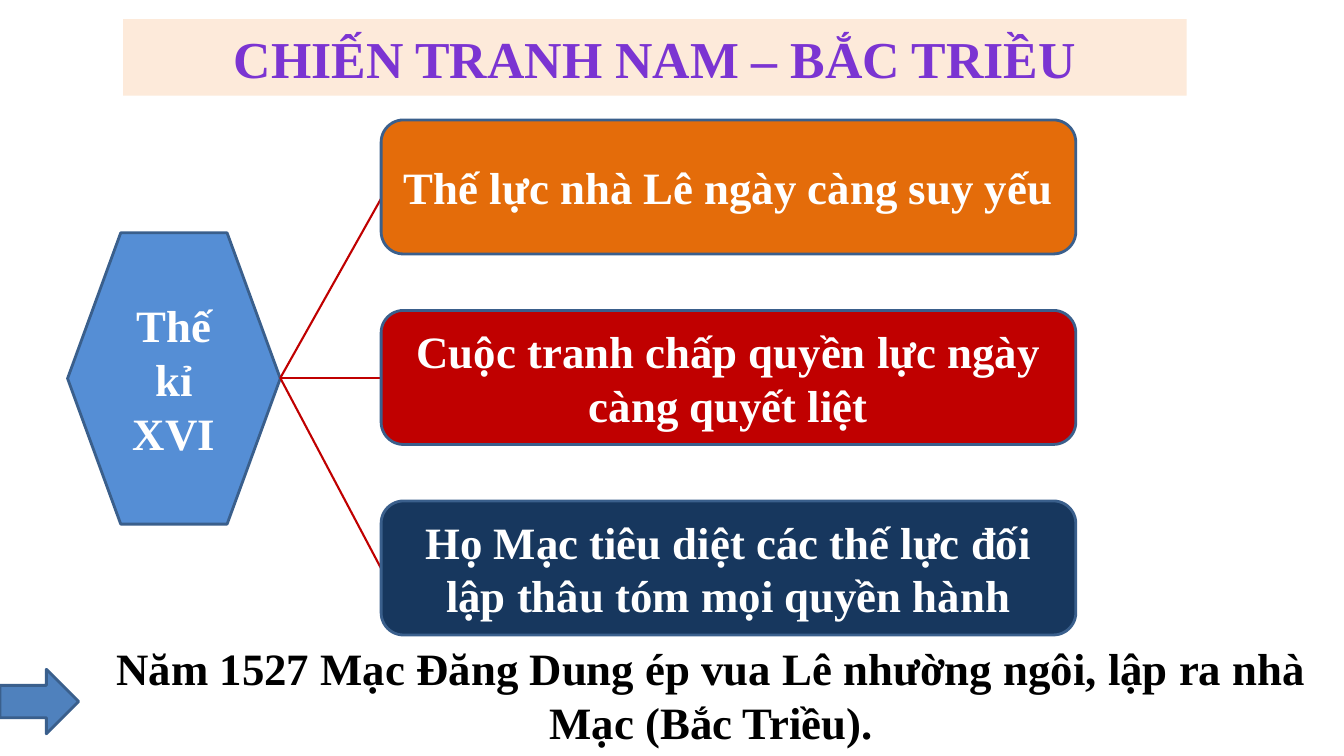
import pptx
import pptx.util
import pptx.dml.color
import pptx.enum.shapes
import pptx.enum.text
import pptx.oxml.ns
import lxml.etree

# Content
HEADING = "CHIẾN TRANH NAM – BẮC TRIỀU"
CENTURY = "Thế kỉ XVI"
CAUSES = [
    ("Thế lực nhà Lê ngày càng suy yếu", "orange"),
    ("Cuộc tranh chấp quyền lực ngày càng quyết liệt", "red"),
    ("Họ Mạc tiêu diệt các thế lực đối lập thâu tóm mọi quyền hành", "navy"),
]
OUTCOME = "Năm 1527 Mạc Đăng Dung ép vua Lê nhường ngôi, lập ra nhà Mạc (Bắc Triều)."

# Theme
THEME = {
    "font": "Times New Roman", "heading_size": 37, "text_size": 32,
    "outline_width": 2, "branch_width": 1.5,
    "heading": "7B34D2", "band": "FDEADA", "century": "558ED5",
    "orange": "E46C0A", "red": "C00000", "navy": "17375E",
    "arrow": "4F81BD", "outline": "3A5F8C", "white": "FFFFFF", "black": "000000",
}

# Layout in px, 100 to the inch
PX = 9144
SLIDE = (1333, 750)
HEADING_AT = (122, 19, 1055, 76)
CENTURY_AT = (67, 231, 211, 289)
CAUSE_LEFT, CAUSE_TOP, CAUSE_WIDTH, CAUSE_HEIGHT = 378, 119, 689, 133
CAUSE_STEP = 189
BRANCH_START = (278, 375)
BRANCH_ENDS = (197, 375, 564)
ARROW_AT = (0, 664, 78, 64)
OUTCOME_AT = (78, 629, 1255, 121)

SHAPES = pptx.enum.shapes.MSO_SHAPE
ANCHOR = pptx.enum.text.MSO_ANCHOR


def emu(lengths):
    return [length * PX for length in lengths]


def rgb(name):
    return pptx.dml.color.RGBColor.from_string(THEME[name])


def set_all(target, values):
    for key, value in values.items():
        setattr(target, key, value)


def write(holder, text, color, size="text_size", anchor=ANCHOR.MIDDLE):
    frame = holder.text_frame
    frame.text = text
    set_all(frame, {
        "word_wrap": True, "vertical_anchor": anchor,
        "auto_size": pptx.enum.text.MSO_AUTO_SIZE.NONE,
        "margin_left": 13 * PX, "margin_right": 13 * PX,
        "margin_top": 7 * PX, "margin_bottom": 7 * PX,
    })
    paragraph = frame.paragraphs[0]
    paragraph.alignment = pptx.enum.text.PP_ALIGN.CENTER
    font = paragraph.runs[0].font
    set_all(font, {"name": THEME["font"], "bold": True,
                   "size": pptx.util.Pt(THEME[size])})
    font.color.rgb = rgb(color)


def add_block(slide, kind, at, fill, text=None):
    block = slide.shapes.add_shape(kind, *emu(at))
    block.shadow.inherit = False
    block.fill.solid()
    block.fill.fore_color.rgb = rgb(fill)
    block.line.color.rgb = rgb("outline")
    block.line.width = pptx.util.Pt(THEME["outline_width"])
    if text:
        write(block, text, "white")


def add_branch(slide, end_y):
    branch = slide.shapes.add_connector(
        pptx.enum.shapes.MSO_CONNECTOR.STRAIGHT,
        *emu((*BRANCH_START, CAUSE_LEFT, end_y)))
    branch.line.color.rgb = rgb("red")
    branch.line.width = pptx.util.Pt(THEME["branch_width"])
    lxml.etree.SubElement(branch._element.spPr, pptx.oxml.ns.qn("a:effectLst"))


def main():
    deck = pptx.Presentation()
    deck.slide_width, deck.slide_height = emu(SLIDE)
    slide = deck.slides.add_slide(deck.slide_layouts[5])

    # Heading band
    heading = slide.shapes.title
    set_all(heading, dict(zip(("left", "top", "width", "height"), emu(HEADING_AT))))
    heading.fill.solid()
    heading.fill.fore_color.rgb = rgb("band")
    write(heading, HEADING, "heading", "heading_size", ANCHOR.TOP)

    # Century and its branching causes
    add_block(slide, SHAPES.HEXAGON, CENTURY_AT, "century", CENTURY)
    for row, ((cause, color), end_y) in enumerate(zip(CAUSES, BRANCH_ENDS)):
        add_branch(slide, end_y)
        cause_at = (CAUSE_LEFT, CAUSE_TOP + row * CAUSE_STEP, CAUSE_WIDTH, CAUSE_HEIGHT)
        add_block(slide, SHAPES.ROUNDED_RECTANGLE, cause_at, color, cause)

    # Outcome
    add_block(slide, SHAPES.RIGHT_ARROW, ARROW_AT, "arrow")
    outcome = slide.shapes.add_textbox(*emu(OUTCOME_AT))
    write(outcome, OUTCOME, "black", anchor=ANCHOR.TOP)

    deck.save("out.pptx")


if __name__ == "__main__":
    main()
